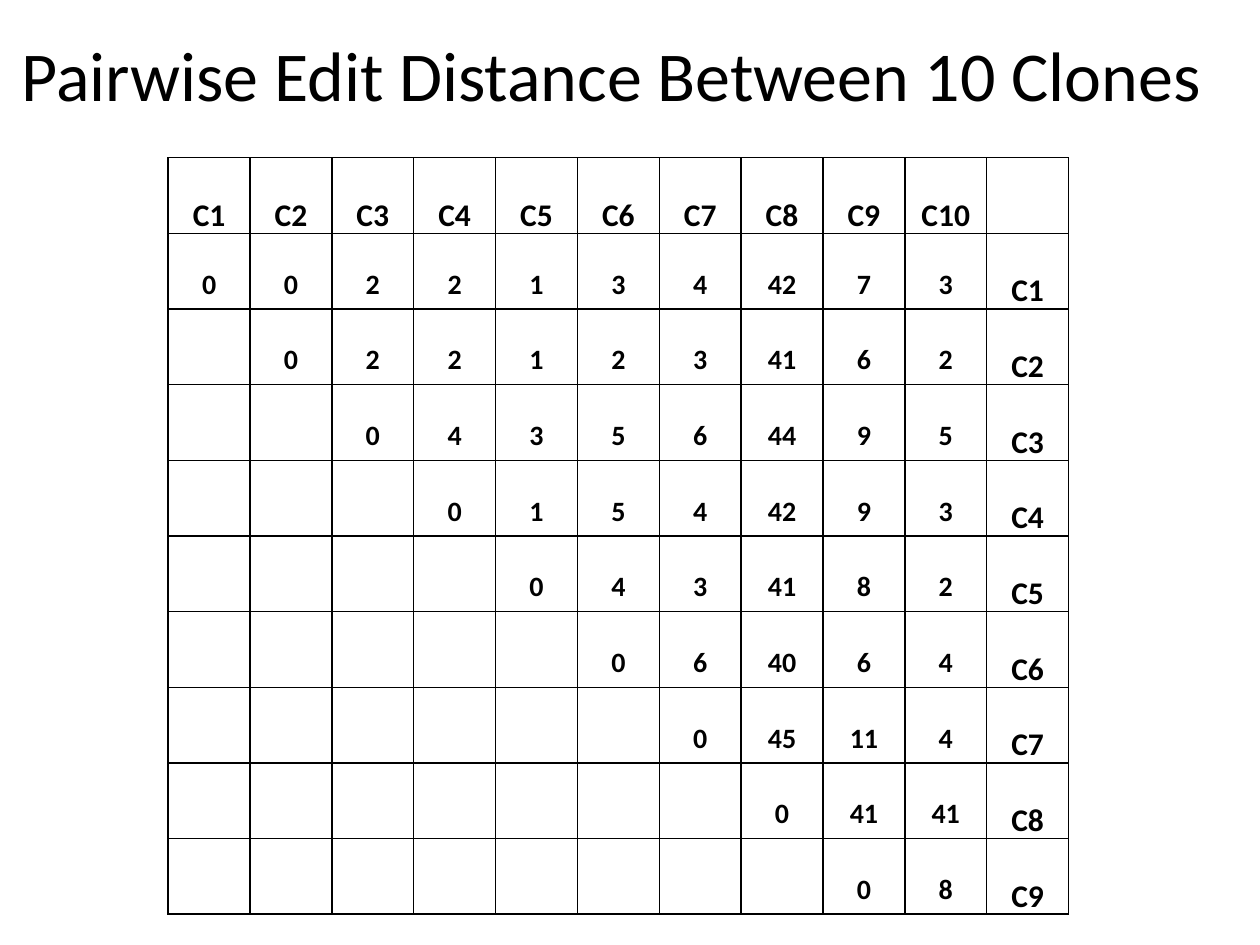
from dataclasses import dataclass

from lxml.etree import SubElement
from pptx import Presentation
from pptx.dml.color import RGBColor
from pptx.enum.text import MSO_ANCHOR as Anchor, PP_ALIGN as Align
from pptx.oxml.ns import qn
from pptx.util import Cm, Pt


@dataclass(frozen=True)
class Theme:
    font: str = "Calibri"
    ink: str = "000000"
    title_size: int = 40
    label_size: int = 18
    distance_size: int = 16
    border: int = 1


THEME = Theme()

TITLE = "Pairwise Edit Distance Between 10 Clones "
CLONES = [f"C{number}" for number in range(1, 11)]

# Upper triangle: each row starts on the diagonal
DISTANCES = [
    [0, 0, 2, 2, 1, 3, 4, 42, 7, 3],
    [0, 2, 2, 1, 2, 3, 41, 6, 2],
    [0, 4, 3, 5, 6, 44, 9, 5],
    [0, 1, 5, 4, 42, 9, 3],
    [0, 4, 3, 41, 8, 2],
    [0, 6, 40, 6, 4],
    [0, 45, 11, 4],
    [0, 41, 41],
    [0, 8],
]


def style_paragraph(paragraph, size, bold=False):
    paragraph.alignment = Align.CENTER
    paragraph.font.name = THEME.font
    paragraph.font.size = Pt(size)
    paragraph.font.bold = bold
    paragraph.font.color.rgb = RGBColor.from_string(THEME.ink)


def add_title(slide):
    title = slide.shapes.add_textbox(Cm(0), Cm(0.84), Cm(24.97), Cm(1.27))
    frame = title.text_frame
    frame.word_wrap = True
    frame.vertical_anchor = Anchor.MIDDLE
    frame.text = TITLE
    style_paragraph(frame.paragraphs[0], THEME.title_size)


def outline_cell(cell):
    properties = cell._tc.get_or_add_tcPr()
    for side in ("a:lnL", "a:lnR", "a:lnT", "a:lnB"):
        line = SubElement(properties, qn(side), w=str(Pt(THEME.border)))
        fill = SubElement(line, qn("a:solidFill"))
        SubElement(fill, qn("a:srgbClr"), val=THEME.ink)
    cell.fill.background()


def fill_cell(cell, text, size):
    cell.margin_left = cell.margin_right = Cm(0.18)
    cell.margin_top = cell.margin_bottom = Cm(0)
    cell.text = text
    paragraph = cell.text_frame.paragraphs[0]
    paragraph.line_spacing = 2.0
    style_paragraph(paragraph, size, bold=True)


def matrix_rows():
    """Header row, then distances padded to the diagonal with the clone name last."""
    yield CLONES + [""]
    for index, distances in enumerate(DISTANCES):
        yield [""] * index + [str(d) for d in distances] + [CLONES[index]]


def add_distance_matrix(slide):
    rows = list(matrix_rows())
    holder = slide.shapes.add_table(
        len(rows), len(rows[0]), Cm(3.39), Cm(3.18), Cm(18.2), Cm(15.24))
    matrix = holder.table
    matrix.first_row = matrix.horz_banding = False
    for column in matrix.columns:
        column.width = Cm(1.65)
    # Minimum height: the double-spaced text stretches each row
    for row in matrix.rows:
        row.height = Cm(1.02)

    for row, texts in zip(matrix.rows, rows):
        for cell, text in zip(row.cells, texts):
            outline_cell(cell)
            if text:
                is_label = text in CLONES
                fill_cell(cell, text,
                          THEME.label_size if is_label else THEME.distance_size)


def main():
    deck = Presentation()
    deck.slide_width, deck.slide_height = Cm(25.4), Cm(19.05)
    slide = deck.slides.add_slide(deck.slide_layouts[6])
    add_title(slide)
    add_distance_matrix(slide)
    deck.save("out.pptx")


if __name__ == "__main__":
    main()
